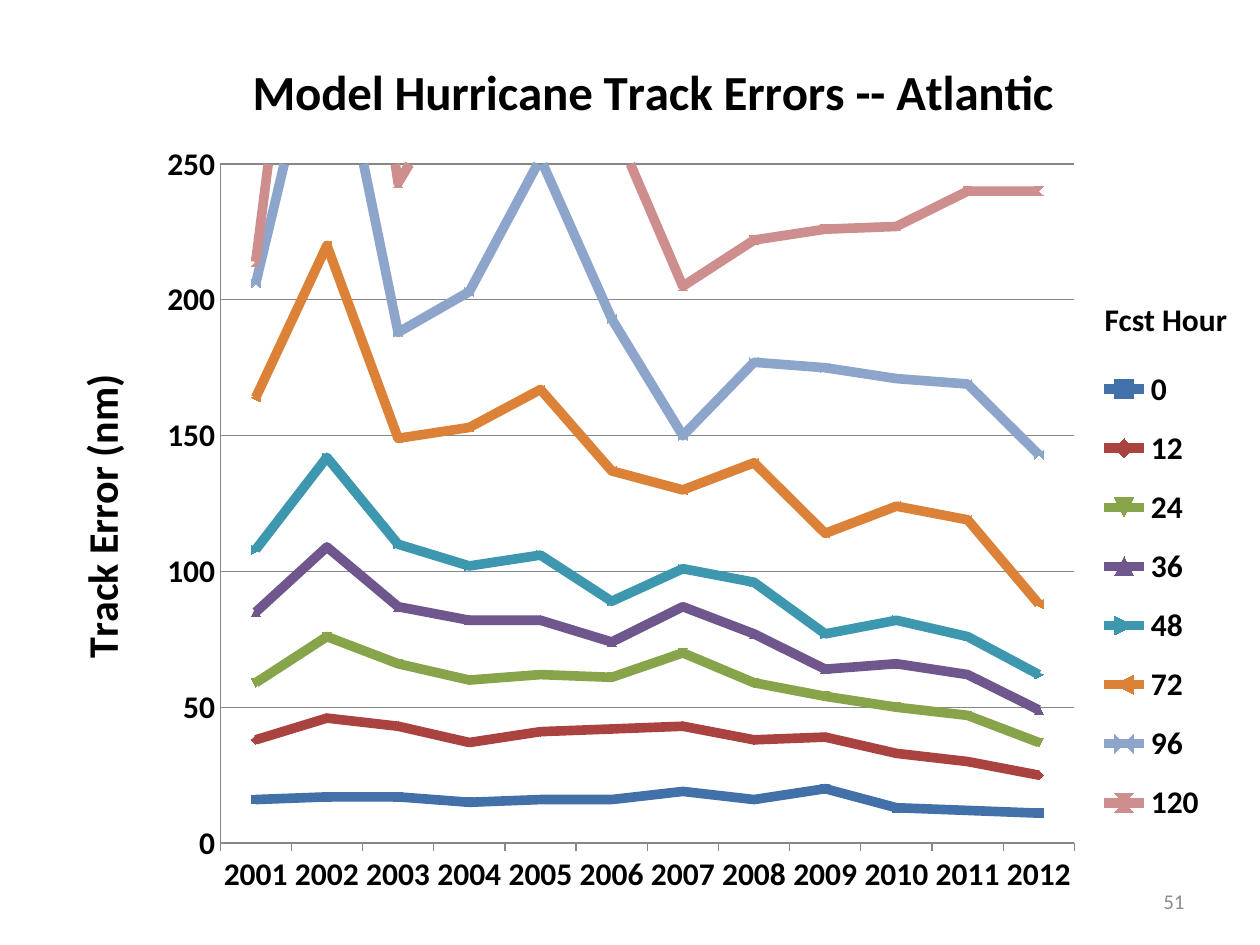
from pptx import Presentation
from pptx.chart.data import CategoryChartData
from pptx.dml.color import RGBColor
from pptx.enum.chart import XL_CHART_TYPE, XL_LEGEND_POSITION, XL_TICK_MARK
from pptx.enum.text import MSO_ANCHOR, PP_ALIGN
from pptx.oxml import parse_xml
from pptx.oxml.ns import nsdecls, qn
from pptx.util import Cm, Pt

BLACK = RGBColor(0x00, 0x00, 0x00)
GRAY = RGBColor(0x8C, 0x8C, 0x8C)
GRID = RGBColor(0x86, 0x86, 0x86)
BLUE = RGBColor(0x42, 0x70, 0xA9)
RED = RGBColor(0xAA, 0x43, 0x40)
GREEN = RGBColor(0x87, 0xA4, 0x4B)
PURPLE = RGBColor(0x6F, 0x56, 0x8D)
TEAL = RGBColor(0x3D, 0x97, 0xAF)
ORANGE = RGBColor(0xDB, 0x82, 0x38)
LIGHT_BLUE = RGBColor(0x8E, 0xA5, 0xCB)
PINK = RGBColor(0xCE, 0x8E, 0x8D)

YEARS = [str(year) for year in range(2001, 2013)]
# Forecast hour, line colour, track error for each year
ERRORS = [
    ("0", BLUE, [16, 17, 17, 15, 16, 16, 19, 16, 20, 13, 12, 11]),
    ("12", RED, [38, 46, 43, 37, 41, 42, 43, 38, 39, 33, 30, 25]),
    ("24", GREEN, [59, 76, 66, 60, 62, 61, 70, 59, 54, 50, 47, 37]),
    ("36", PURPLE, [85, 109, 87, 82, 82, 74, 87, 77, 64, 66, 62, 49]),
    ("48", TEAL, [108, 142, 110, 102, 106, 89, 101, 96, 77, 82, 76, 62]),
    ("72", ORANGE, [164, 220, 149, 153, 167, 137, 130, 140, 114, 124, 119, 88]),
    ("96", LIGHT_BLUE, [206, 316, 188, 203, 252, 193, 150, 177, 175, 171, 169, 143]),
    ("120", PINK, [214, 420, 243, 287, 350, 266, 205, 222, 226, 227, 240, 240]),
]


class SlideBuilder:
    """Holds the style and the current slide."""

    def __init__(self, slide, font="Calibri"):
        self.s = slide
        self.font = font

    def style(self, font, size, color=BLACK, bold=False):
        font.name, font.size, font.bold = self.font, Pt(size), bold
        font.color.rgb = color

    def text(self, text, x, y, w, h, size, color=BLACK, bold=False,
             align=PP_ALIGN.LEFT, anchor=MSO_ANCHOR.TOP, wrap=True):
        tf = self.s.shapes.add_textbox(Cm(x), Cm(y), Cm(w), Cm(h)).text_frame
        tf.word_wrap, tf.vertical_anchor = wrap, anchor
        p = tf.paragraphs[0]
        p.text, p.alignment = text, align
        self.style(p.font, size, color, bold)

    def place(self, element, index, x, y, w=None, h=None, inner=False):
        """Position a chart part by fractions of the chart's size."""
        for old in element.findall(qn("c:layout")):
            element.remove(old)
        items = [("layoutTarget", "inner")] if inner else []
        items += [("xMode", "edge"), ("yMode", "edge"), ("x", x), ("y", y)]
        if w:
            items += [("w", w), ("h", h)]
        body = "".join(f'<c:{tag} val="{val}"/>' for tag, val in items)
        element.insert(index, parse_xml(
            f'<c:layout {nsdecls("c")}><c:manualLayout>{body}</c:manualLayout></c:layout>'))

    def chart_title(self, title, text, size, x, y):
        tf = title.text_frame
        tf.text = text
        self.style(tf.paragraphs[0].font, size, bold=True)
        self.place(title._element, 1, x, y)
        return tf

    def axis(self, axis, tick):
        self.style(axis.tick_labels.font, 18, bold=True)
        axis.major_tick_mark, axis.minor_tick_mark = tick, XL_TICK_MARK.NONE
        axis.format.line.color.rgb = GRID

    def line_chart(self, title, value_title, years, rows, x, y, w, h):
        data = CategoryChartData()
        data.categories = years
        for name, _, values in rows:
            data.add_series(name, values)
        chart = self.s.shapes.add_chart(
            XL_CHART_TYPE.LINE_MARKERS, Cm(x), Cm(y), Cm(w), Cm(h), data).chart
        self.style(chart.font, 18)
        self.chart_title(chart.chart_title, title, 28, 0.17, 0.02)

        # Axes
        self.axis(chart.category_axis, XL_TICK_MARK.OUTSIDE)
        val = chart.value_axis
        self.axis(val, XL_TICK_MARK.NONE)
        val.minimum_scale, val.maximum_scale, val.major_unit = 0, 250, 50
        val.major_gridlines.format.line.color.rgb = GRID
        tf = self.chart_title(val.axis_title, value_title, 24, 0.02, 0.38)
        tf._txBody.bodyPr.set("rot", "-5400000")

        # Lines
        plot = chart.plots[0]
        plot.vary_by_categories = False
        for series, (_, color, _) in zip(plot.series, rows):
            series.smooth = False
            series.format.line.width = Pt(5.5)
            series.format.line.color.rgb = color
            series.marker.size = 5
            series.marker.format.fill.solid()
            series.marker.format.fill.fore_color.rgb = color
            series.marker.format.line.color.rgb = color

        # Legend and plot positions
        chart.has_legend = True
        legend = chart.legend
        legend.position = XL_LEGEND_POSITION.RIGHT
        legend.include_in_layout = False
        self.style(legend.font, 18, bold=True)
        self.place(legend._element, 1, 0.88, 0.36, 0.11, 0.56)
        plot_area = chart._chartSpace.chart.plotArea
        self.place(plot_area, 0, 0.15, 0.15, 0.72, 0.77, inner=True)


def main():
    prs = Presentation()
    prs.slide_width, prs.slide_height = Cm(25.4), Cm(19.05)
    b = SlideBuilder(prs.slides.add_slide(prs.slide_layouts[6]))

    # Track error chart
    b.line_chart("Model Hurricane Track Errors -- Atlantic", "Track Error (nm)",
                 YEARS, ERRORS, 0.85, 0.64, 23.92, 17.78)
    # Legend heading
    b.text("Fcst Hour", 22.02, 5.93, 2.97, 1.02, 18, bold=True, wrap=False)
    # Slide number
    b.text("51", 18.2, 17.66, 5.93, 1.01, 12, GRAY,
           align=PP_ALIGN.RIGHT, anchor=MSO_ANCHOR.MIDDLE)

    prs.save("out.pptx")


if __name__ == "__main__":
    main()
